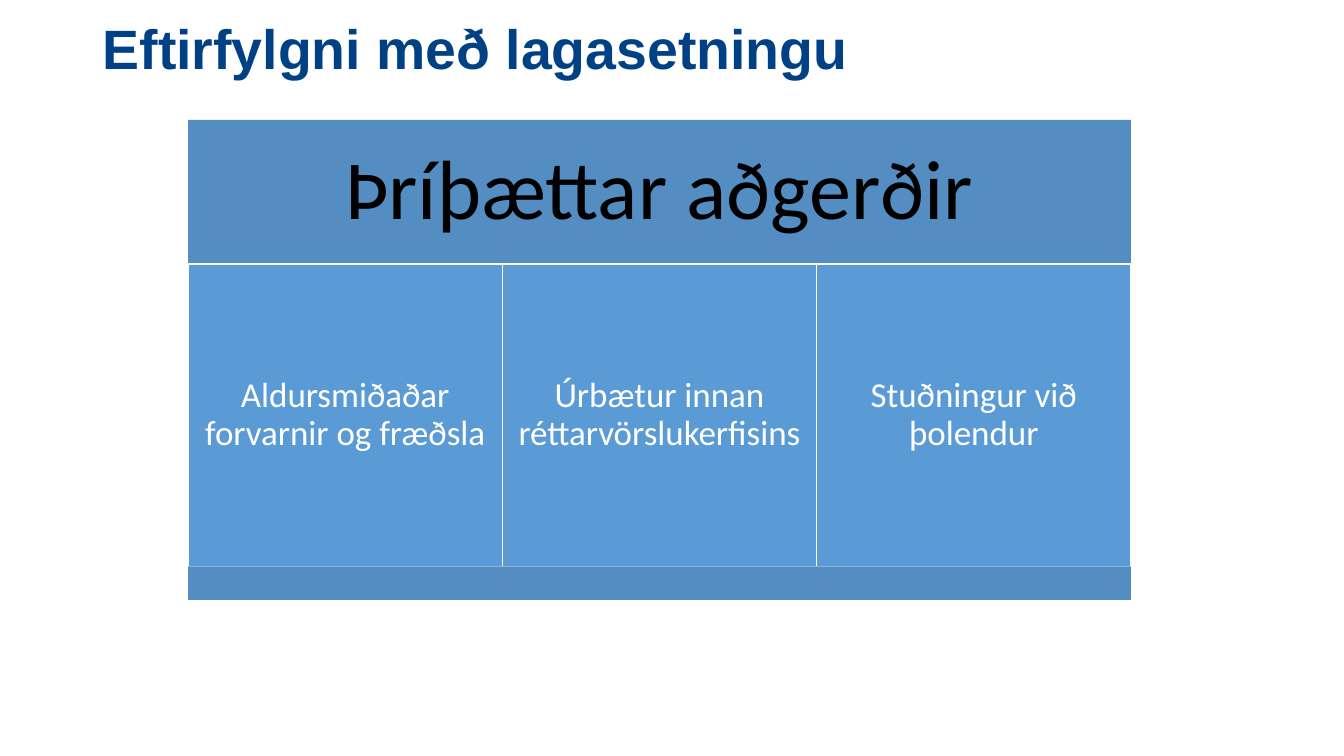
from pptx import Presentation
from pptx.dml.color import RGBColor
from pptx.enum.shapes import MSO_SHAPE
from pptx.enum.text import MSO_ANCHOR, PP_ALIGN
from pptx.util import Cm, Pt

RECTANGLE = MSO_SHAPE.RECTANGLE
MIDDLE = MSO_ANCHOR.MIDDLE
LEFT, CENTER = PP_ALIGN.LEFT, PP_ALIGN.CENTER

NAVY, BAND_BLUE, COLUMN_BLUE = "004185", "538DC1", "5B9BD5"
BLACK, WHITE = "000000", "FFFFFF"


def write_text(shape, text, color, margin, alignment, font_format):
    frame = shape.text_frame
    frame.word_wrap = True
    frame.vertical_anchor = MIDDLE
    for side in ("left", "right", "top", "bottom"):
        setattr(frame, f"margin_{side}", Cm(margin))
    paragraph = frame.paragraphs[0]
    paragraph.text = text
    paragraph.alignment = alignment
    paragraph.line_spacing = 0.9
    for name, value in font_format.items():
        setattr(paragraph.font, name, value)
    paragraph.font.color.rgb = RGBColor.from_string(color)


def add_block(left, top, width, height, fill, line=None):
    """Add a flat rectangle, outlined only if a line colour is given."""
    block = slide.shapes.add_shape(RECTANGLE, Cm(left), Cm(top), Cm(width), Cm(height))
    block.shadow.inherit = False
    block.fill.solid()
    block.fill.fore_color.rgb = RGBColor.from_string(fill)
    if line:
        block.line.color.rgb = RGBColor.from_string(line)
        block.line.width = Pt(1)
    else:
        block.line.fill.background()
    return block


presentation = Presentation()
presentation.slide_width = Cm(33.87)
presentation.slide_height = Cm(19.05)
slide = presentation.slides.add_slide(presentation.slide_layouts[6])

title = slide.shapes.add_textbox(Cm(2.34), Cm(1.02), Cm(29.13), Cm(0.56))
write_text(title, "Eftirfylgni með lagasetningu", NAVY, 0.25, LEFT,
           {"name": "Arial", "size": Pt(39.6), "bold": True})

# A header band, three equal columns and a footer band, stacked
actions = [
    "Aldursmiðaðar forvarnir og fræðsla",
    "Úrbætur innan réttarvörslukerfisins",
    "Stuðningur við þolendur",
]
left, top = 4.74, 3.02
column_width = 7.92
total_width = column_width * len(actions)
header_height, column_height, footer_height = 3.63, 7.62, 0.85
column_top = top + header_height

header = add_block(left, top, total_width, header_height, BAND_BLUE)
write_text(header, "Þríþættar aðgerðir", BLACK, 0.64, CENTER,
           {"name": "Calibri", "size": Pt(60)})

for index, action in enumerate(actions):
    column = add_block(left + index * column_width, column_top,
                       column_width, column_height, COLUMN_BLUE, WHITE)
    write_text(column, action, WHITE, 0.25, CENTER,
               {"name": "Calibri", "size": Pt(25)})

add_block(left, column_top + column_height, total_width, footer_height, BAND_BLUE)

presentation.save("out.pptx")
